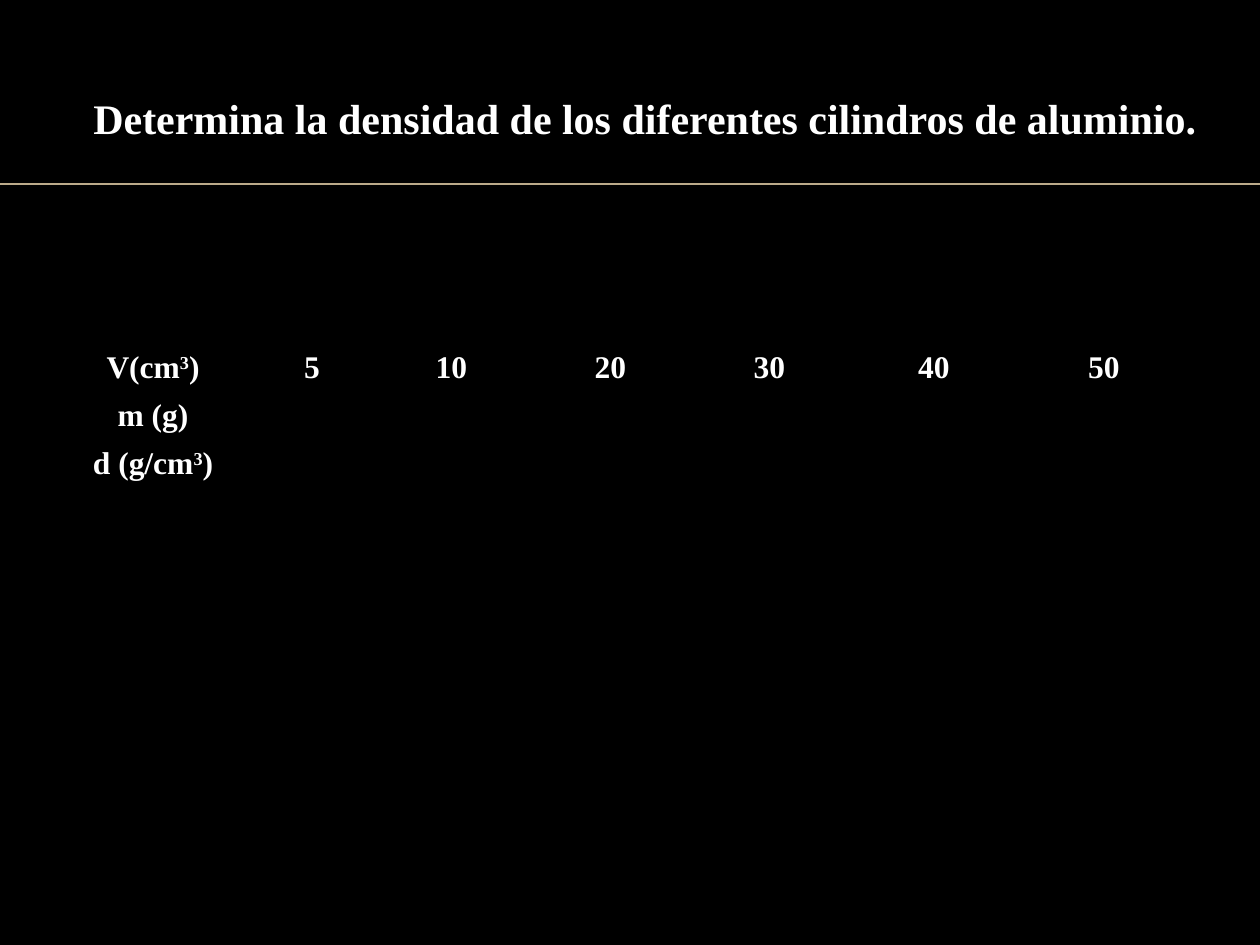
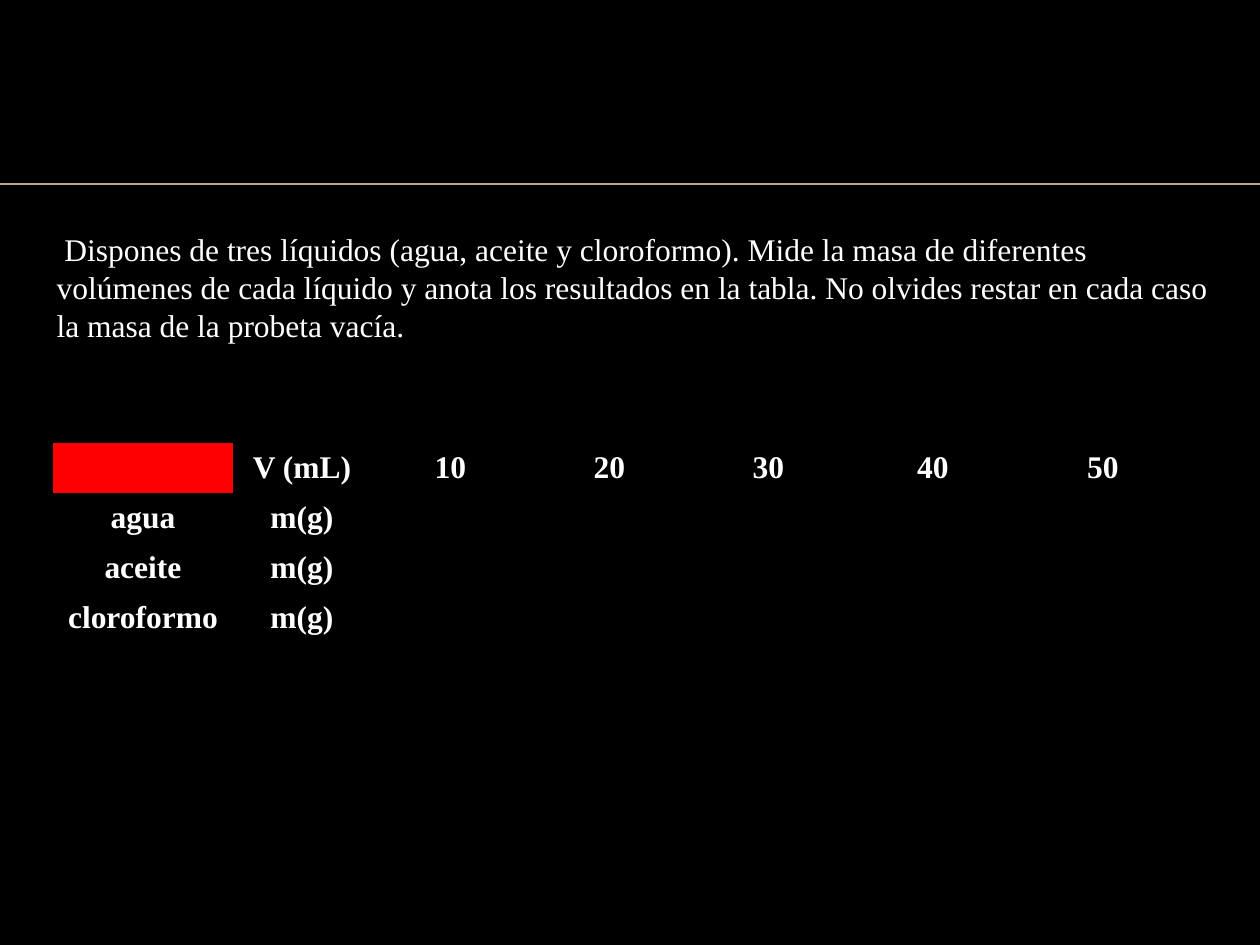
from pptx import Presentation
from pptx.dml.color import RGBColor
from pptx.enum.shapes import MSO_CONNECTOR
from pptx.enum.text import MSO_ANCHOR, MSO_AUTO_SIZE, PP_ALIGN
from pptx.oxml.ns import qn
from pptx.util import Pt
from lxml import etree

PX = 914400 // 126
WIDE, HIGH = 1260, 945
BLACK, WHITE, GOLD, RED = "000000", "FFFFFF", "BBAA8A", "FF0000"
LEFT, CENTER = PP_ALIGN.LEFT, PP_ALIGN.CENTER
TOP, MIDDLE = MSO_ANCHOR.TOP, MSO_ANCHOR.MIDDLE
NO_FIT = MSO_AUTO_SIZE.NONE
STRAIGHT = MSO_CONNECTOR.STRAIGHT
NO_STYLE = "{2D5ABB26-0587-4C30-8999-92F81FD0307C}"
SUPER = "³"


def rgb(code):
    return RGBColor.from_string(code)


def write(par, text, size, bold, align):
    """Fill a paragraph; each ³ becomes a raised 3."""
    par.alignment = align
    head, mark, tail = text.partition(SUPER)
    for part, up in ((head, False), ("3" if mark else "", True), (tail, False)):
        if not part:
            continue
        run = par.add_run()
        run.text = part
        look = {"name": "Times New Roman", "size": Pt(size), "bold": bold}
        for key, val in look.items():
            setattr(run.font, key, val)
        run.font.color.rgb = rgb(WHITE)
        if up:
            run._r.get_or_add_rPr().set("baseline", "30000")


pages = [
    {
        "layout": 5,
        "text": "Determina la densidad de los diferentes cilindros de aluminio.",
        "box": (74, 86, 1142, 63),
        "style": (24, True, CENTER),
        "spot": (54, 344),
        "cols": [198, 120, 159, 159, 159, 170, 170],
        "row": 48,
        "cells": [
            ["V(cm³)", "5", "10", "20", "30", "40", "50"],
            ["m (g)"],
            ["d (g/cm³)"],
        ],
    },
    {
        "layout": 1,
        "text": " Dispones de tres líquidos (agua, aceite y cloroformo). "
                "Mide la masa de diferentes volúmenes de cada líquido y anota "
                "los resultados en la tabla. No olvides restar en cada caso "
                "la masa de la probeta vacía.",
        "box": (44, 224, 1191, 127),
        "style": (18, False, LEFT),
        "spot": (53, 443),
        "cols": [180, 138, 159, 159, 159, 170, 170],
        "row": 50,
        "cells": [
            ["", "V (mL)", "10", "20", "30", "40", "50"],
            ["agua", "m(g)"],
            ["aceite", "m(g)"],
            ["cloroformo", "m(g)"],
        ],
        "mark": RED,
    },
]

deck = Presentation()
deck.slide_width, deck.slide_height = WIDE * PX, HIGH * PX
back = deck.slide_master.background.fill
back.solid()
back.fore_color.rgb = rgb(BLACK)

for page in pages:
    slide = deck.slides.add_slide(deck.slide_layouts[page["layout"]])

    # Rule under the title band
    rule = slide.shapes.add_connector(STRAIGHT, 0, 184 * PX, WIDE * PX, 184 * PX)
    rule.line.color.rgb = rgb(GOLD)
    rule.line.width = Pt(1)
    etree.SubElement(rule._element.spPr, qn("a:effectLst"))

    # Text goes in the last placeholder; an unused title is removed
    *spare, box = list(slide.placeholders)
    for item in spare:
        item._element.getparent().remove(item._element)
    for key, val in zip(("left", "top", "width", "height"), page["box"]):
        setattr(box, key, val * PX)
    frame = box.text_frame
    form = {"word_wrap": True, "auto_size": NO_FIT, "vertical_anchor": TOP}
    for key, val in form.items():
        setattr(frame, key, val)
    par = frame.paragraphs[0]
    write(par, page["text"], *page["style"])
    par.space_before = Pt(0)
    props = par._p.get_or_add_pPr()
    props.set("marL", "0")
    props.set("indent", "0")
    etree.SubElement(props, qn("a:buNone"))

    # Table to fill in
    cols, cells = page["cols"], page["cells"]
    left, top = page["spot"]
    grid = slide.shapes.add_table(
        len(cells), len(cols), left * PX, top * PX,
        sum(cols) * PX, len(cells) * page["row"] * PX).table
    grid.first_row = grid.horz_banding = False
    grid._tbl.tblPr.find(qn("a:tableStyleId")).text = NO_STYLE
    for col, width in zip(grid.columns, cols):
        col.width = width * PX
    for r, line in enumerate(cells):
        for c in range(len(cols)):
            cell = grid.cell(r, c)
            cell.fill.background()
            cell.vertical_anchor = MIDDLE
            for side in ("left", "right", "top", "bottom"):
                setattr(cell, "margin_" + side, 2 * PX)
            if c < len(line):
                write(cell.text_frame.paragraphs[0], line[c], 18, True, CENTER)
    if "mark" in page:
        fill = grid.cell(0, 0).fill
        fill.solid()
        fill.fore_color.rgb = rgb(page["mark"])

deck.save("out.pptx")
